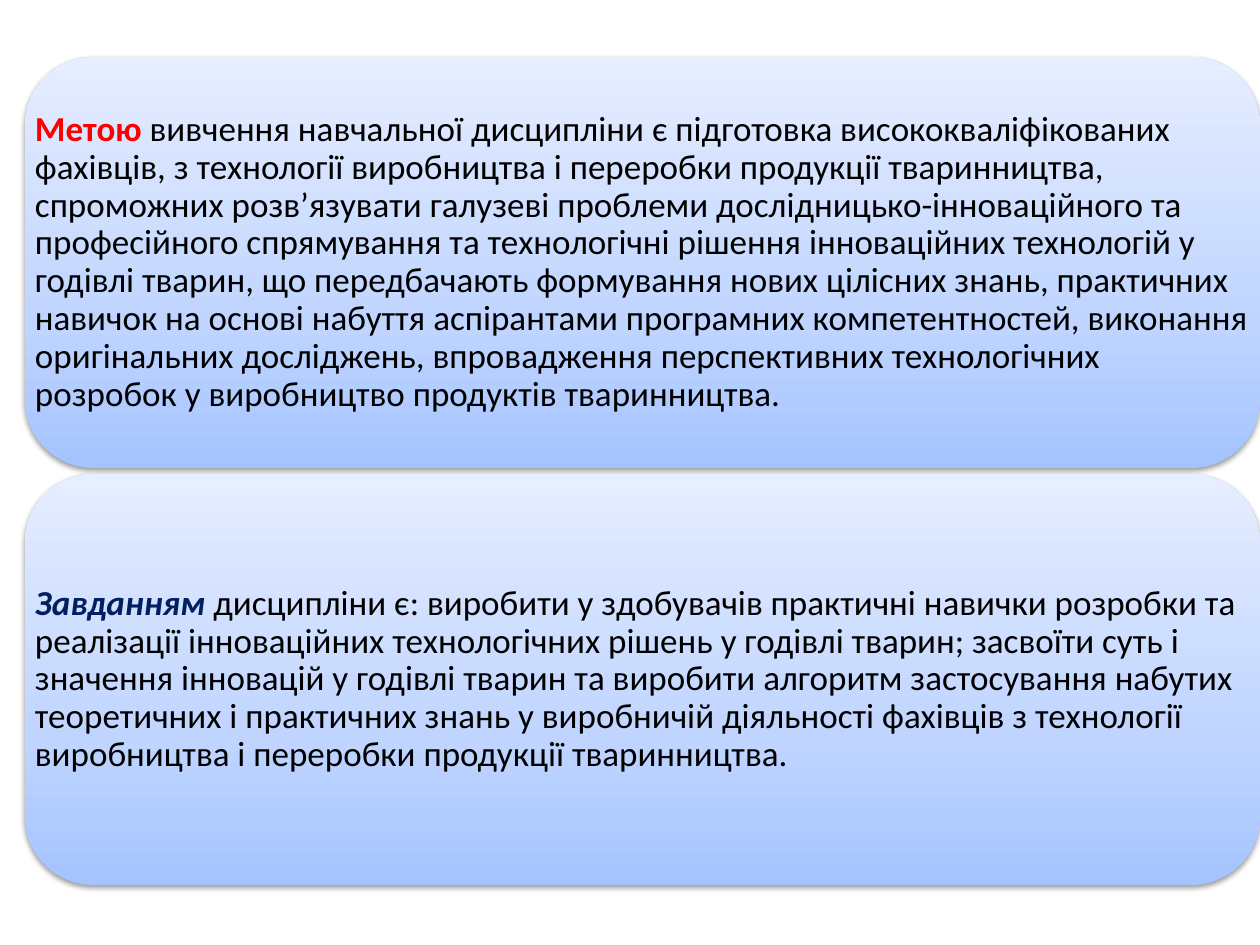
"""Build a slide with the aim and the task of a course on two gradient cards."""
from dataclasses import dataclass

from lxml.etree import fromstring
from pptx import Presentation
from pptx.dml.color import RGBColor
from pptx.enum.shapes import MSO_SHAPE
from pptx.enum.text import MSO_ANCHOR, PP_ALIGN
from pptx.util import Emu, Pt

CARDS = [
    {
        "lead": "Метою",
        "body": " вивчення навчальної дисципліни є підготовка висококваліфікованих фахівців, "
                "з технології виробництва і переробки продукції тваринництва, спроможних "
                "розв’язувати галузеві проблеми дослідницько-інноваційного та професійного "
                "спрямування та технологічні рішення інноваційних технологій у годівлі тварин, "
                "що передбачають формування нових цілісних знань, практичних навичок на основі "
                "набуття аспірантами програмних компетентностей, виконання оригінальних "
                "досліджень, впровадження перспективних технологічних розробок у виробництво "
                "продуктів тваринництва.",
        "color": "FF0000",
        "italic": False,
    },
    {
        "lead": "Завданням ",
        "body": "дисципліни є: виробити у здобувачів практичні навички розробки та реалізації "
                "інноваційних технологічних рішень у годівлі тварин; засвоїти суть і значення "
                "інновацій у годівлі тварин та виробити алгоритм застосування набутих "
                "теоретичних і практичних знань у виробничій діяльності фахівців з технології "
                "виробництва і переробки продукції тваринництва.",
        "color": "002060",
        "italic": True,
    },
]


@dataclass(frozen=True)
class Theme:
    font: str = "Calibri"
    size: int = 20
    text: str = "000000"
    shadow: str = "000000"
    gradient: tuple = ((0, "A4C4FF"), (35, "BFD4FF"), (100, "E6EEFF"))


THEME = Theme()
SLIDE_W, SLIDE_H = 1260, 945
LEFT, TOP, CARD_W, CARD_H, GAP = 25, 57, 1235, 411, 6
INSET = 10
NS = 'xmlns:a="http://schemas.openxmlformats.org/drawingml/2006/main"'


def px(length):
    return Emu(round(length * 914400 / 126))


def add_card(slide, box):
    card = slide.shapes.add_shape(MSO_SHAPE.ROUNDED_RECTANGLE, *box)
    card.line.fill.background()
    stops = "".join(
        f'<a:gs pos="{pos * 1000}"><a:srgbClr val="{color}"/></a:gs>'
        for pos, color in THEME.gradient
    )
    gradient = fromstring(
        f'<a:gradFill {NS} rotWithShape="1"><a:gsLst>{stops}</a:gsLst>'
        '<a:lin ang="16200000" scaled="0"/></a:gradFill>'
    )
    shadow = fromstring(
        f'<a:effectLst {NS}><a:outerShdw blurRad="40000" dist="20000" dir="5400000" '
        f'rotWithShape="0"><a:srgbClr val="{THEME.shadow}"><a:alpha val="38000"/>'
        '</a:srgbClr></a:outerShdw></a:effectLst>'
    )
    properties = card.element.spPr
    properties.insert(2, gradient)
    properties.append(shadow)


def add_run(paragraph, text, color, bold=False, italic=False):
    run = paragraph.add_run()
    run.text = text
    font = run.font
    font.name, font.size = THEME.font, Pt(THEME.size)
    font.bold, font.italic = bold, italic
    font.color.rgb = RGBColor.from_string(color)


def add_statement(slide, box, content):
    frame = slide.shapes.add_textbox(*box).text_frame
    frame.word_wrap = True
    frame.vertical_anchor = MSO_ANCHOR.MIDDLE
    frame.margin_left = frame.margin_right = px(INSET)
    frame.margin_top = frame.margin_bottom = px(INSET)
    statement = frame.paragraphs[0]
    statement.alignment = PP_ALIGN.LEFT
    statement.line_spacing = 0.9
    statement.space_after = Pt(THEME.size * 0.35)
    add_run(statement, content["lead"], content["color"], True, content["italic"])
    add_run(statement, content["body"], THEME.text)


def main():
    deck = Presentation()
    deck.slide_width, deck.slide_height = px(SLIDE_W), px(SLIDE_H)
    slide = deck.slides.add_slide(deck.slide_layouts[6])
    for row, content in enumerate(CARDS):
        top = TOP + row * (CARD_H + GAP)
        box = [px(length) for length in (LEFT, top, CARD_W, CARD_H)]
        add_card(slide, box)
        add_statement(slide, box, content)
    deck.save("out.pptx")


if __name__ == "__main__":
    main()
